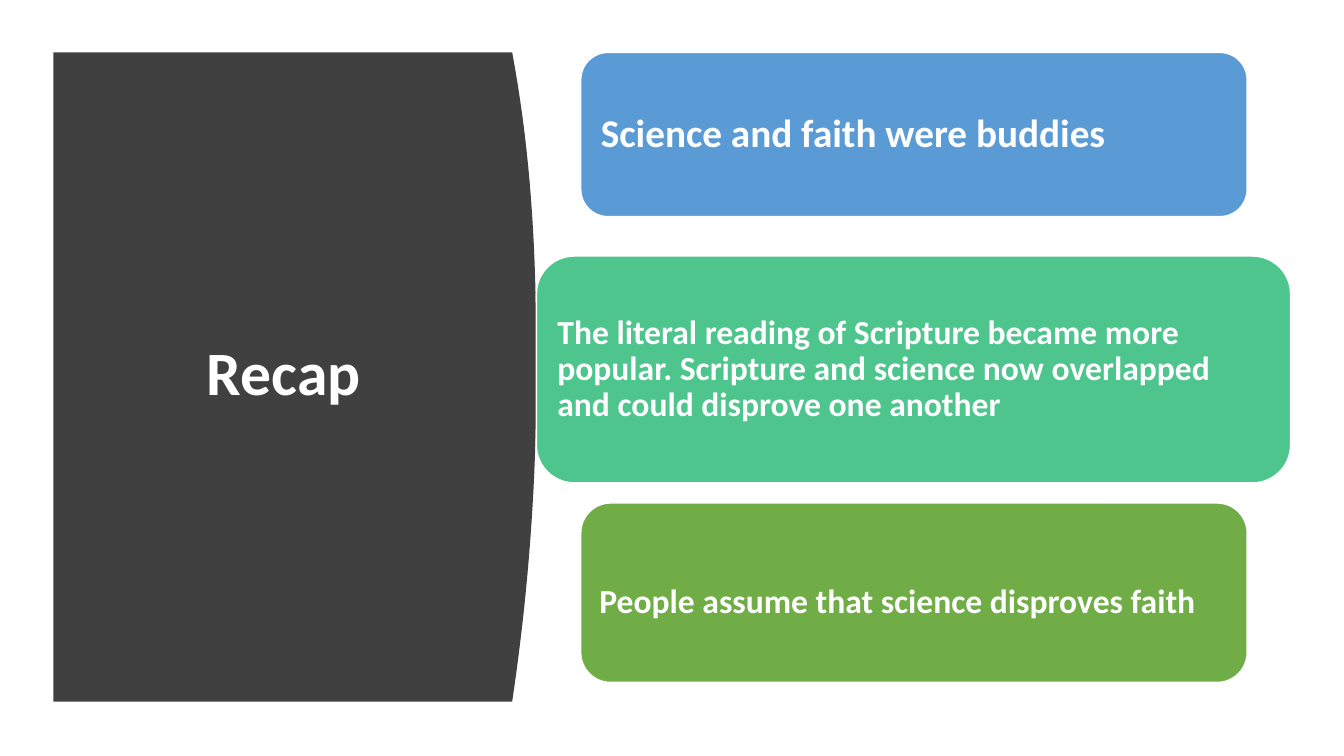
from pptx import Presentation
from pptx.dml.color import RGBColor
from pptx.enum.shapes import MSO_SHAPE
from pptx.enum.text import MSO_ANCHOR, PP_ALIGN
from pptx.util import Inches, Pt

WHITE = "FFFFFF"
DARK = "404040"
PANEL_LEFT, PANEL_TOP, PANEL_BOTTOM = 0.53, 0.52, 6.96
PANEL_EDGE, PANEL_BULGE = 5.08, 0.24
CURVE_STEPS = 40

# text, left, top, width, height, fill, size, inset, extra top inset
CARDS = [
    ("Science and faith were buddies",
     5.76, 0.52, 6.61, 1.63, "5B9BD5", 28, 0.12, 0),
    ("The literal reading of Scripture became more popular. "
     "Scripture and science now overlapped and could disprove one another",
     5.32, 2.54, 7.48, 2.25, "4DC58D", 24, 0.1, 0),
    ("People assume that science disproves faith",
     5.76, 4.99, 6.61, 1.78, "70AD47", 24, 0.1, 0.2),
]


def color(hex_value):
    return RGBColor.from_string(hex_value)


def fill_shape(shape, hex_value):
    shape.shadow.inherit = False
    shape.fill.solid()
    shape.fill.fore_color.rgb = color(hex_value)


def write_text(tf, text, size, align):
    tf.word_wrap = True
    tf.vertical_anchor = MSO_ANCHOR.MIDDLE
    p = tf.paragraphs[0]
    p.alignment = align
    p.line_spacing = 0.9
    r = p.add_run()
    r.text = text
    r.font.name = "Calibri"
    r.font.size = Pt(size)
    r.font.bold = True
    r.font.color.rgb = color(WHITE)


def curve_point(step):
    """Point on the panel's bulging right edge, counted from the top."""
    t = 2 * step / CURVE_STEPS - 1
    power = 2.5 if t < 0 else 2
    x = PANEL_EDGE + PANEL_BULGE * (1 - abs(t) ** power)
    y = PANEL_TOP + (PANEL_BOTTOM - PANEL_TOP) * step / CURVE_STEPS
    return Inches(x), Inches(y)


def add_panel(s):
    left = Inches(PANEL_LEFT)
    builder = s.shapes.build_freeform(left, Inches(PANEL_TOP))
    edge = [curve_point(step) for step in range(CURVE_STEPS + 1)]
    builder.add_line_segments(edge + [(left, Inches(PANEL_BOTTOM))], close=True)
    panel = builder.convert_to_shape()
    fill_shape(panel, DARK)
    panel.line.fill.background()


def place_title(s, text):
    title = s.shapes.title
    title.left, title.top = Inches(0.94), Inches(1.11)
    title.width, title.height = Inches(3.75), Inches(5.24)
    write_text(title.text_frame, text, 44, PP_ALIGN.CENTER)
    # Bring the title in front of the panel
    s.shapes._spTree.append(title._element)


def add_card(s, text, left, top, width, height, fill, size, inset, extra_top):
    card = s.shapes.add_shape(MSO_SHAPE.ROUNDED_RECTANGLE, Inches(left),
                              Inches(top), Inches(width), Inches(height))
    fill_shape(card, fill)
    card.line.color.rgb = color(WHITE)
    card.line.width = Pt(1)
    tf = card.text_frame
    tf.margin_left = tf.margin_right = tf.margin_bottom = Inches(inset)
    tf.margin_top = Inches(inset + extra_top)
    write_text(tf, text, size, PP_ALIGN.LEFT)


def main():
    prs = Presentation()
    prs.slide_width, prs.slide_height = Inches(13.33), Inches(7.5)
    s = prs.slides.add_slide(prs.slide_layouts[5])
    add_panel(s)
    place_title(s, "Recap")
    for card in CARDS:
        add_card(s, *card)
    prs.save("out.pptx")


if __name__ == "__main__":
    main()
